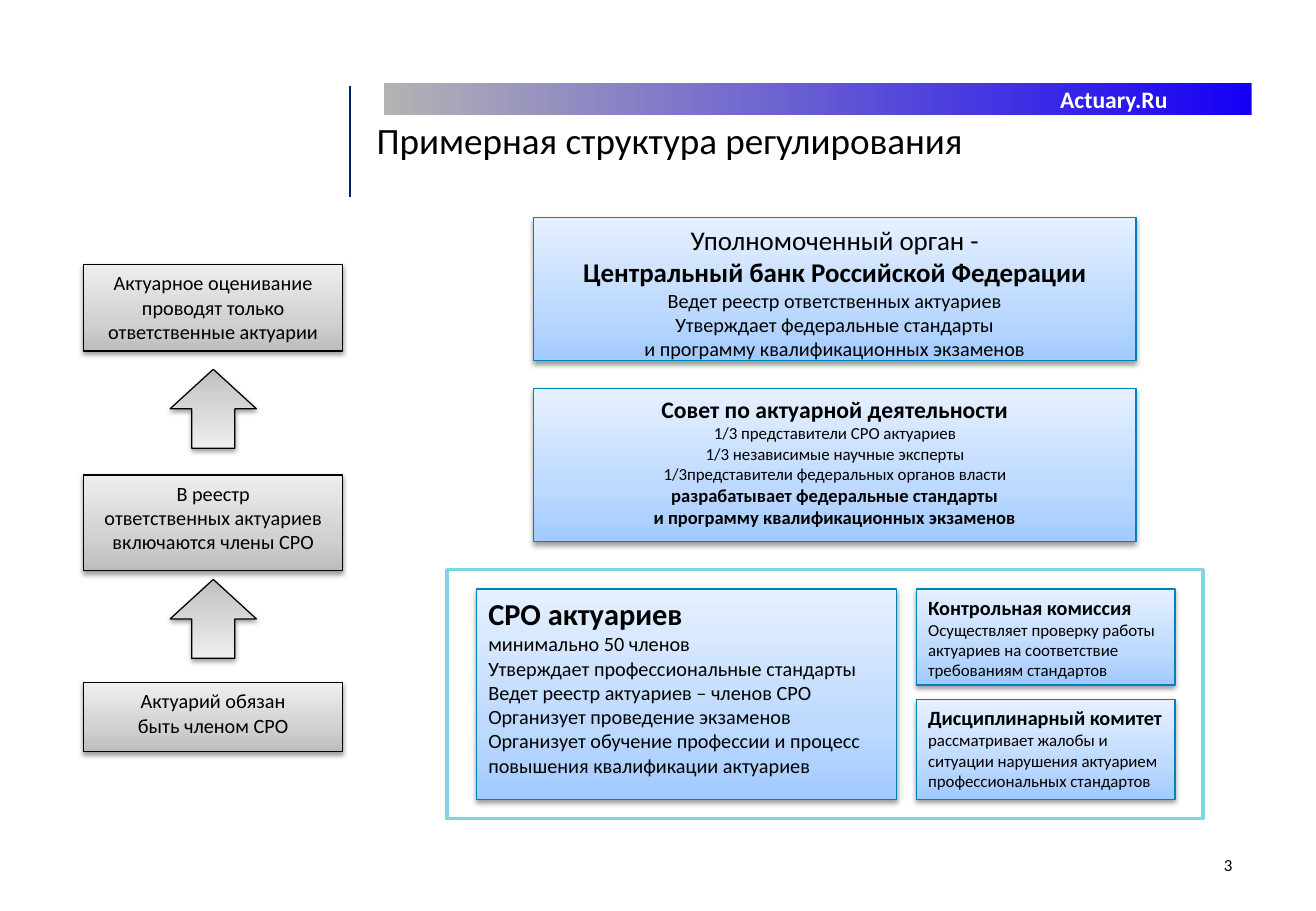
from lxml import etree
from pptx import Presentation
from pptx.dml.color import RGBColor
from pptx.enum.shapes import MSO_CONNECTOR, MSO_SHAPE as SHAPE
from pptx.enum.text import MSO_ANCHOR as ANCHOR, PP_ALIGN as ALIGN
from pptx.oxml.ns import qn
from pptx.util import Emu, Pt

PX = 9144  # EMU in one px, 100 px to the inch
BLUE = [(0, "A1CAFF"), (35, "BDD9FF"), (100, "E6F0FF")]
GREY = [(0, "BDBDBD"), (35, "D1D1D1"), (100, "EEEEEE")]
BAR = [(0, "1600F4"), (100, "B3B3B3")]
INSETS = (10, 5, 10, 5)


def px(n):
    return Emu(n * PX)


def rgb(hex_color):
    return RGBColor.from_string(hex_color)


def sub(parent, tag, **attrs):
    return etree.SubElement(parent, qn(tag), {k: str(v) for k, v in attrs.items()})


class Deck:
    font = "Calibri"

    def __init__(self, width, height):
        self.prs = Presentation()
        self.prs.slide_width, self.prs.slide_height = px(width), px(height)
        self.s = self.prs.slides.add_slide(self.prs.slide_layouts[6])

    def fill_text(self, sp, paragraphs, align=ALIGN.LEFT, color="000000",
                  anchor=ANCHOR.TOP, insets=INSETS):
        """Put text in a shape; each paragraph is a list of (text, size, bold) runs."""
        tf = sp.text_frame
        frame = dict(zip(("margin_left", "margin_top", "margin_right", "margin_bottom"),
                         map(px, insets)))
        frame.update(word_wrap=True, vertical_anchor=anchor)
        for name, value in frame.items():
            setattr(tf, name, value)
        for i, runs in enumerate(paragraphs):
            p = tf.add_paragraph() if i else tf.paragraphs[0]
            p.alignment = align
            for text, size, bold in runs:
                r = p.add_run()
                r.text = text
                for name, value in dict(name=self.font, size=Pt(size), bold=bold).items():
                    setattr(r.font, name, value)
                r.font.color.rgb = rgb(color)

    def text(self, box, paragraphs, **style):
        self.fill_text(self.s.shapes.add_textbox(*map(px, box)), paragraphs, **style)

    def shape(self, box, kind=SHAPE.RECTANGLE, stops=None, angle=90, line=None,
              width=0.75, shadow=False):
        sp = self.s.shapes.add_shape(kind, *map(px, box))
        if stops:
            sp.fill.gradient()
            sp.fill.gradient_angle = angle
            gs_list = sp._element.spPr.find(".//" + qn("a:gsLst"))
            gs_list.clear()
            for pos, color in stops:
                sub(sub(gs_list, "a:gs", pos=pos * 1000), "a:srgbClr", val=color)
        else:
            sp.fill.background()
        if line:
            sp.line.color.rgb = rgb(line)
            sp.line.width = Pt(width)
        else:
            sp.line.fill.background()
        sp.shadow.inherit = False
        if shadow:
            effects = sp._element.spPr.find(qn("a:effectLst"))
            outer = sub(effects, "a:outerShdw", blurRad=Pt(3.1), dist=Pt(1.6),
                        dir=90 * 60000, rotWithShape=0)
            sub(sub(outer, "a:srgbClr", val="000000"), "a:alpha", val=38000)
        return sp

    def card(self, box, paragraphs, stops=BLUE, line="0080BF", align=ALIGN.LEFT):
        sp = self.shape(box, stops=stops, line=line, shadow=True)
        self.fill_text(sp, paragraphs, align=align)

    def step(self, top, height, lines):
        self.card((69, top, 213, height), [[(t, 12, False)] for t in lines],
                  stops=GREY, line="000000", align=ALIGN.CENTER)

    def up_arrow(self, top):
        sp = self.shape((140, top, 71, 65), SHAPE.DOWN_ARROW, GREY,
                        line="000000", shadow=True)
        sp.rotation = 180

    def line(self, x1, y1, x2, y2, color, width):
        c = self.s.shapes.add_connector(MSO_CONNECTOR.STRAIGHT, *map(px, (x1, y1, x2, y2)))
        c.line.color.rgb = rgb(color)
        c.line.width = Pt(width)
        sub(c._element.spPr, "a:effectLst")


def main():
    d = Deck(1083, 750)

    header = d.shape((316, 68, 714, 27), stops=BAR, angle=180)
    d.fill_text(header, [[("Actuary.Ru", 14, True)]], align=ALIGN.RIGHT, color="FFFFFF",
                anchor=ANCHOR.MIDDLE, insets=(8, 0, 69, 0))
    d.line(288, 71, 288, 162, "002368", 0.75)
    d.text((945, 699, 79, 50), [[("3", 10, False)]], align=ALIGN.RIGHT)
    d.text((310, 97, 714, 39), [[("Примерная структура регулирования", 22, False)]],
           insets=(0, 0, 0, 0))

    d.card((439, 179, 496, 118), [
        [("Уполномоченный орган -", 16, False)],
        [("Центральный банк Российской Федерации", 16, True)],
        [("Ведет реестр ответственных актуариев", 12, False)],
        [("Утверждает федеральные стандарты", 12, False)],
        [("и программу квалификационных экзаменов", 12, False)],
    ], align=ALIGN.CENTER)
    d.card((439, 320, 496, 126), [
        [("Совет по актуарной деятельности", 14, True)],
        [("1/3 представители СРО актуариев", 10, False)],
        [("1/3 независимые научные эксперты", 10, False)],
        [("1/3представители федеральных органов власти", 10, False)],
        [("разрабатывает федеральные стандарты", 11, True)],
        [("и программу квалификационных экзаменов", 11, True)],
    ], align=ALIGN.CENTER)

    d.card((392, 485, 346, 173), [
        [("СРО актуариев", 18, True)],
        [("минимально 50 членов", 12, False)],
        [("Утверждает профессиональные стандарты", 12, False)],
        [("Ведет реестр актуариев – членов СРО", 12, False)],
        [("Организует проведение экзаменов", 12, False)],
        [("Организует обучение профессии и процесс повышения "
          "квалификации актуариев", 12, False)],
    ])
    d.card((754, 576, 213, 82), [
        [("Дисциплинарный комитет ", 12, True),
         ("рассматривает жалобы и ситуации нарушения актуарием "
          "профессиональных стандартов", 10, False)],
    ])
    d.card((754, 485, 213, 79), [
        [("Контрольная комиссия", 12, True)],
        [("Осуществляет проверку работы актуариев на соответствие "
          "требованиям стандартов", 10, False)],
    ])
    d.shape((368, 469, 622, 205), line="80D4E8", width=2)

    d.step(562, 57, ["Актуарий обязан", "быть членом СРО"])
    d.up_arrow(477)
    d.step(391, 79, ["В реестр", "ответственных актуариев включаются члены СРО"])
    d.up_arrow(304)
    d.step(218, 71, ["Актуарное оценивание проводят только ответственные актуарии"])

    d.prs.save("out.pptx")


if __name__ == "__main__":
    main()
